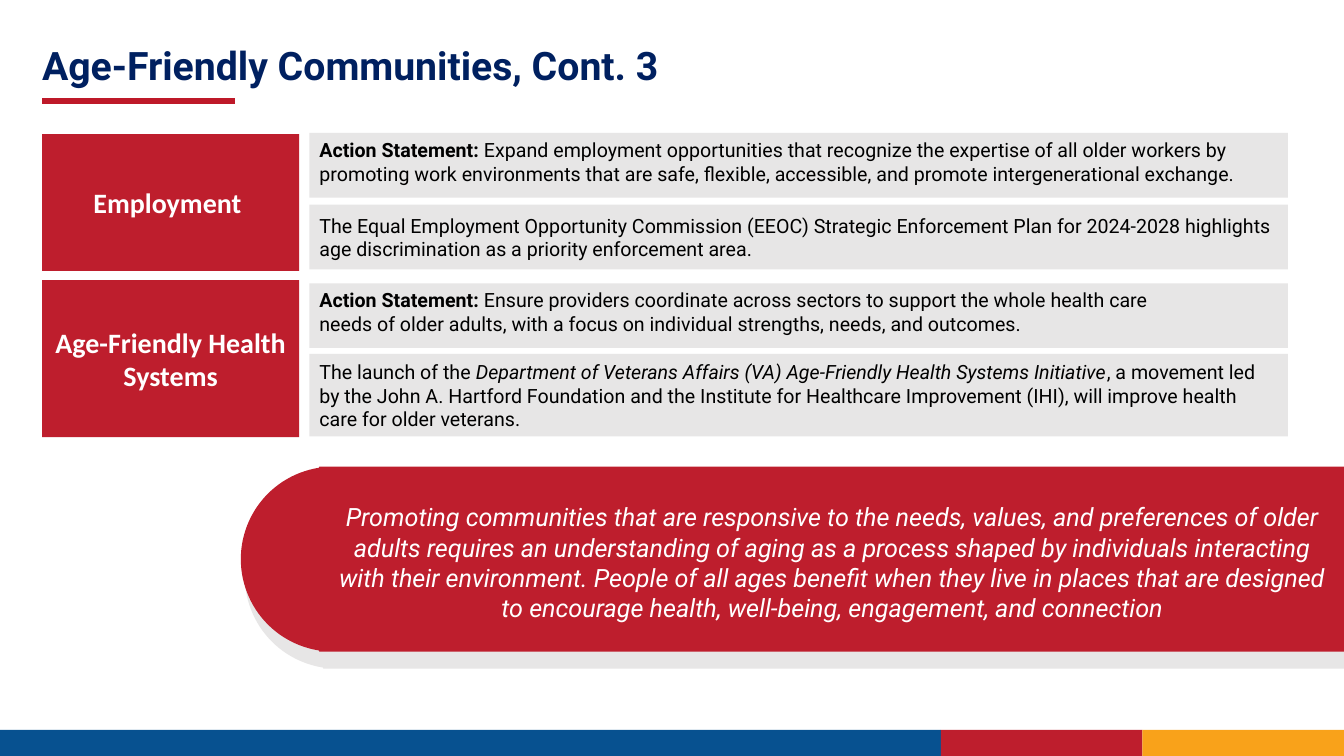
from dataclasses import dataclass
from math import cos, radians, sin

from lxml.etree import SubElement
from pptx import Presentation
from pptx.dml.color import RGBColor
from pptx.enum.shapes import MSO_CONNECTOR, MSO_SHAPE
from pptx.enum.text import MSO_ANCHOR as Anchor, PP_ALIGN as Align
from pptx.oxml.ns import qn
from pptx.util import Cm, Pt


@dataclass(frozen=True)
class Theme:
    navy: str = "002060"
    blue: str = "075190"
    red: str = "BE1E2D"
    rule_red: str = "BE1929"
    orange: str = "F9A21A"
    grey: str = "E7E6E6"
    black: str = "000000"
    white: str = "FFFFFF"
    body_font: str = "Roboto"
    tag_font: str = "Calibri"
    title_size: int = 28
    tag_size: int = 20
    quote_size: int = 18
    body_size: int = 14


THEME = Theme()
SLIDE_WIDTH, SLIDE_HEIGHT = 33.87, 19.05
TAG_LEFT, TAG_WIDTH = 1.06, 6.48
CARD_LEFT, CARD_WIDTH = 7.8, 24.66

# Each topic: tag text, tag top, tag height, cards.
# Each card: top, height, anchor, right inset, spans of (text, style).
TOPICS = [
    ("Employment ", 3.38, 3.45, [
        (3.35, 1.63, Anchor.TOP, 0.33, [
            ("Action Statement: ", "bold"),
            ("Expand employment opportunities that recognize the expertise of "
             "all older workers by promoting work environments that are safe, "
             "flexible, accessible, and promote intergenerational exchange.", ""),
        ]),
        (5.16, 1.63, Anchor.MIDDLE, 0.25, [
            ("The Equal Employment Opportunity Commission (EEOC) Strategic "
             "Enforcement Plan for 2024-2028 highlights age discrimination as "
             "a priority enforcement area.", ""),
        ]),
    ]),
    ("Age-Friendly Health Systems", 7.06, 3.96, [
        (7.14, 1.63, Anchor.TOP, 2.13, [
            ("Action Statement: ", "bold"),
            ("Ensure providers coordinate across sectors to support the whole "
             "health care needs of older adults, with a focus on individual "
             "strengths, needs, and outcomes.", ""),
        ]),
        (8.92, 2.08, Anchor.MIDDLE, 0.25, [
            ("The launch of the ", ""),
            ("Department of Veterans Affairs (VA) Age-Friendly Health Systems "
             "Initiative", "italic"),
            (", a movement led by the John A. Hartford Foundation and the "
             "Institute for Healthcare Improvement (IHI), will improve health "
             "care for older veterans.", ""),
        ]),
    ]),
]

QUOTE = (
    "Promoting communities that are responsive to the needs, values, and "
    "preferences of older adults requires an understanding of aging as a "
    "process shaped by individuals interacting with their environment. People "
    "of all ages benefit when they live in places that are designed to "
    "encourage health, well-being, engagement, and connection"
)


def paint(shape, color):
    shape.shadow.inherit = False
    shape.fill.solid()
    shape.fill.fore_color.rgb = RGBColor.from_string(color)
    shape.line.fill.background()


def add_block(page, left, top, width, height, color):
    block = page.shapes.add_shape(
        MSO_SHAPE.RECTANGLE, Cm(left), Cm(top), Cm(width), Cm(height))
    paint(block, color)
    return block


def add_box(page, left, top, width, height):
    return page.shapes.add_textbox(Cm(left), Cm(top), Cm(width), Cm(height))


def write(shape, spans, size, color, font=THEME.body_font,
          align=Align.LEFT, anchor=Anchor.MIDDLE):
    frame = shape.text_frame
    frame.word_wrap = True
    frame.vertical_anchor = anchor
    para = frame.paragraphs[0]
    para.alignment = align
    for text, style in spans:
        span = para.add_run()
        span.text = text
        span.font.name = font
        span.font.size = Pt(size)
        span.font.color.rgb = RGBColor.from_string(color)
        span.font.bold = style == "bold"
        span.font.italic = style == "italic"
    return para


def add_title(page, text):
    box = add_box(page, 0.81, 0.53, 30.48, 2.34)
    para = write(box, [(text, "bold")], THEME.title_size, THEME.navy)
    para.line_spacing = 0.9
    rule = page.shapes.add_connector(
        MSO_CONNECTOR.STRAIGHT, Cm(1.06), Cm(2.54), Cm(5.92), Cm(2.54))
    rule.line.color.rgb = RGBColor.from_string(THEME.rule_red)
    rule.line.width = Pt(4.5)
    SubElement(rule._element.spPr, qn("a:effectLst"))


def add_topic(page, name, top, height, cards):
    tag = add_block(page, TAG_LEFT, top, TAG_WIDTH, height, THEME.red)
    write(tag, [(name, "bold")], THEME.tag_size, THEME.white,
          THEME.tag_font, Align.CENTER)
    for card_top, card_height, anchor, inset, spans in cards:
        card = add_block(page, CARD_LEFT, card_top, CARD_WIDTH, card_height,
                         THEME.grey)
        card.text_frame.margin_right = Cm(inset)
        write(card, spans, THEME.body_size, THEME.black, anchor=anchor)


def add_banner(page, left, top, color):
    """Band with a round left end that runs to the slide's right edge."""
    radius = 2.33
    shoulder = left + 1.98
    bottom = top + 2 * radius
    arc = [(left + radius + radius * cos(radians(angle)),
            top + radius + radius * sin(radians(angle)))
           for angle in range(99, 262, 3)]
    corners = [(SLIDE_WIDTH, top), (SLIDE_WIDTH, bottom), (shoulder, bottom)]
    builder = page.shapes.build_freeform(Cm(shoulder), Cm(top))
    builder.add_line_segments([(Cm(x), Cm(y)) for x, y in corners + arc])
    paint(builder.convert_to_shape(), color)


def add_footer(page):
    top, left = 18.39, 0
    for width, color in [(23.71, THEME.blue), (5.08, THEME.red),
                         (5.08, THEME.orange)]:
        add_block(page, left, top, width, SLIDE_HEIGHT - top, color)
        left += width


def main():
    deck = Presentation()
    deck.slide_width, deck.slide_height = Cm(SLIDE_WIDTH), Cm(SLIDE_HEIGHT)
    page = deck.slides.add_slide(deck.slide_layouts[6])

    # Frame of the page
    add_footer(page)
    add_title(page, "Age-Friendly Communities, Cont. 3")

    # Topics with their cards
    for topic in TOPICS:
        add_topic(page, *topic)

    # Closing statement on a banner with a grey echo behind it
    add_banner(page, 6.17, 12.19, THEME.grey)
    add_banner(page, 6.07, 11.76, THEME.red)
    quote = add_box(page, 8.1, 12.52, 25.76, 3.33)
    write(quote, [(QUOTE, "italic")], THEME.quote_size, THEME.white,
          align=Align.CENTER, anchor=Anchor.TOP)

    deck.save("out.pptx")


if __name__ == "__main__":
    main()
